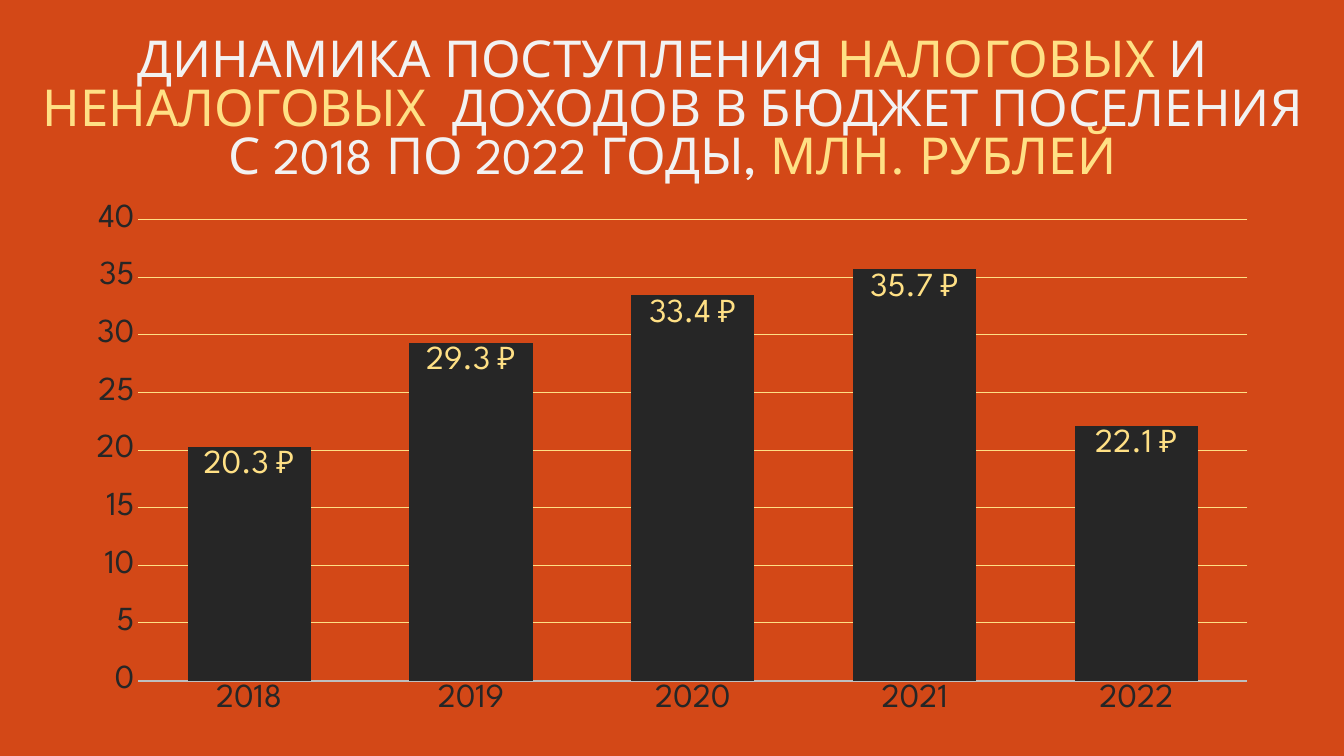
from pptx import Presentation
from pptx.chart.data import CategoryChartData
from pptx.dml.color import RGBColor
from pptx.enum.chart import XL_CHART_TYPE as ChartType
from pptx.enum.chart import XL_LABEL_POSITION as LabelPosition
from pptx.enum.chart import XL_TICK_MARK as TickMark
from pptx.enum.text import MSO_ANCHOR as Anchor
from pptx.enum.text import MSO_AUTO_SIZE as AutoSize
from pptx.enum.text import PP_ALIGN as Align
from pptx.util import Inches, Pt

FONT = "League Spartan"
COLORS = {
    "background": "D34817",
    "dark": "262626",
    "light": "F2F2F2",
    "accent": "FFE085",
    "axis": "BFBFBF",
}
TITLE = [
    ("ДИНАМИКА ПОСТУПЛЕНИЯ ", "light"),
    ("НАЛОГОВЫХ", "accent"),
    (" И ", "light"),
    ("НЕНАЛОГОВЫХ", "accent"),
    ("  ДОХОДОВ В БЮДЖЕТ ПОСЕЛЕНИЯ С 2018 ПО 2022 ГОДЫ, ", "light"),
    ("МЛН. РУБЛЕЙ", "accent"),
]
REVENUE = {"2018": 20.3, "2019": 29.3, "2020": 33.4, "2021": 35.7, "2022": 22.1}


def color(name):
    return RGBColor.from_string(COLORS[name])


def fill_with(fill, name):
    fill.solid()
    fill.fore_color.rgb = color(name)


def format_font(font, size, name):
    font.name = FONT
    font.size = Pt(size)
    font.bold = False
    font.color.rgb = color(name)


def add_text(paragraph, text, size=24, name="dark"):
    run = paragraph.add_run()
    run.text = text
    format_font(run.font, size, name)


def place(shape, left, top, width, height):
    shape.left, shape.top = Inches(left), Inches(top)
    shape.width, shape.height = Inches(width), Inches(height)


def fill_title(slide):
    title = slide.shapes.title
    place(title, 0.23, 0.33, 12.88, 1.59)
    frame = title.text_frame
    frame.word_wrap = True
    frame.auto_size = AutoSize.NONE
    frame.vertical_anchor = Anchor.TOP
    paragraph = frame.paragraphs[0]
    paragraph.alignment = Align.CENTER
    paragraph.line_spacing = 0.8
    for text, name in TITLE:
        add_text(paragraph, text, size=36.3, name=name)


def format_axis(axis):
    axis.major_tick_mark = TickMark.NONE
    axis.minor_tick_mark = TickMark.NONE
    format_font(axis.tick_labels.font, 24, "dark")


def format_line(line, name, width):
    line.color.rgb = color(name)
    line.width = Pt(width)


def add_revenue_chart(slide):
    data = CategoryChartData()
    data.categories = list(REVENUE)
    data.add_series("Series 1", list(REVENUE.values()))
    chart = slide.shapes.add_chart(
        ChartType.COLUMN_CLUSTERED,
        Inches(0.72), Inches(1.92), Inches(11.89), Inches(5.28), data,
    ).chart
    chart.has_legend = False
    chart.has_title = False
    format_font(chart.font, 24, "dark")

    years, amounts = chart.category_axis, chart.value_axis
    format_axis(years)
    format_line(years.format.line, "axis", 1.25)
    format_axis(amounts)
    amounts.format.line.fill.background()
    amounts.minimum_scale, amounts.maximum_scale = 0, 40
    amounts.major_unit = 5
    amounts.has_major_gridlines = True
    format_line(amounts.major_gridlines.format.line, "accent", 0.75)

    plot = chart.plots[0]
    plot.gap_width = 80
    plot.overlap = 25
    plot.vary_by_categories = False
    series = plot.series[0]
    fill_with(series.format.fill, "dark")
    labels = series.data_labels
    labels.show_value = True
    labels.position = LabelPosition.INSIDE_END
    labels.number_format = '#,##0.0\\ "₽"'
    labels.number_format_is_linked = False
    format_font(labels.font, 24, "accent")


def main():
    presentation = Presentation()
    presentation.slide_width = Inches(13.33)
    presentation.slide_height = Inches(7.5)
    slide = presentation.slides.add_slide(presentation.slide_layouts[5])
    fill_with(slide.background.fill, "background")
    add_revenue_chart(slide)
    fill_title(slide)
    presentation.save("out.pptx")


if __name__ == "__main__":
    main()
